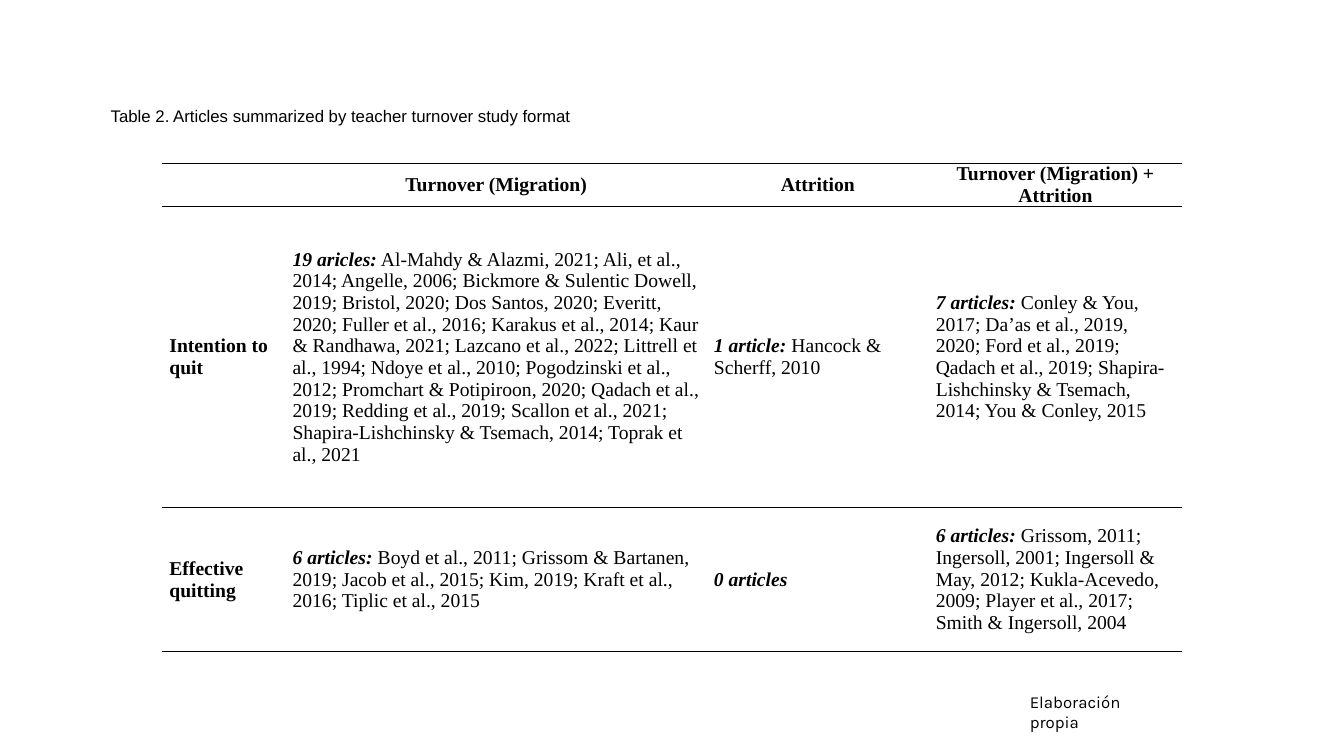
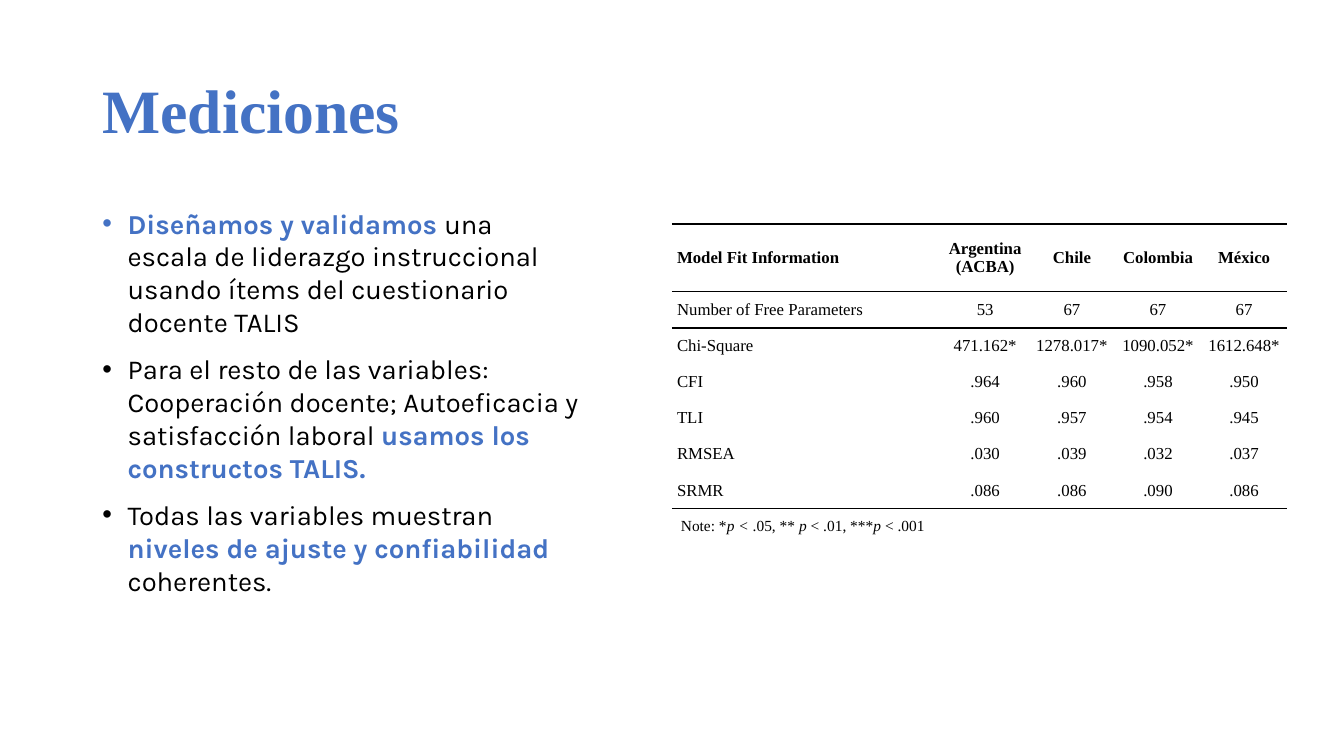
"""Build two slides on teacher turnover: a literature table and a model fit table."""
from lxml import etree
from pptx import Presentation
from pptx.dml.color import RGBColor
from pptx.enum import text as t
from pptx.oxml import ns
from pptx.util import Pt

BLACK = RGBColor(0x00, 0x00, 0x00)
BLUE = RGBColor(0x44, 0x72, 0xC4)
SERIF, SANS, CAPTION = "Times New Roman", "Karla", "Arial"
PLAIN_TABLE = "{2D5ABB26-0587-4C30-8999-92F81FD0307C}"
LEFT, CENTER = t.PP_ALIGN.LEFT, t.PP_ALIGN.CENTER

BOLD = {"bold": True}
ITALIC = {"italic": True}
LEAD = {"bold": True, "italic": True}
ACCENT = {"bold": True, "color": BLUE}

ARTICLES = [
    ["", "Turnover (Migration)", "Attrition", "Turnover (Migration) + Attrition"],
    [
        "Intention to quit",
        [("19 aricles:", LEAD),
         " Al-Mahdy & Alazmi, 2021; Ali, et al., 2014; Angelle, 2006; "
         "Bickmore & Sulentic Dowell, 2019; Bristol, 2020; Dos Santos, 2020; "
         "Everitt, 2020; Fuller et al., 2016; Karakus et al., 2014; "
         "Kaur & Randhawa, 2021; Lazcano et al., 2022; Littrell et al., 1994; "
         "Ndoye et al., 2010; Pogodzinski et al., 2012; "
         "Promchart & Potipiroon, 2020; Qadach et al., 2019; "
         "Redding et al., 2019; Scallon et al., 2021; "
         "Shapira-Lishchinsky & Tsemach, 2014; Toprak et al., 2021"],
        [("1 article:", LEAD), " Hancock & Scherff, 2010"],
        [("7 articles: ", LEAD),
         "Conley & You, 2017; Da’as et al., 2019, 2020; Ford et al., 2019; "
         "Qadach et al., 2019; Shapira-Lishchinsky & Tsemach, 2014; "
         "You & Conley, 2015"],
    ],
    [
        "Effective quitting",
        [("6 articles:", LEAD),
         " Boyd et al., 2011; Grissom & Bartanen, 2019; Jacob et al., 2015; "
         "Kim, 2019; Kraft et al., 2016; Tiplic et al., 2015"],
        [("0 articles", LEAD)],
        [("6 articles:", LEAD),
         " Grissom, 2011; Ingersoll, 2001; Ingersoll & May, 2012; "
         "Kukla-Acevedo, 2009; Player et al., 2017; Smith & Ingersoll, 2004"],
    ],
]

BULLETS = [
    [("Diseñamos y validamos ", ACCENT),
     "una escala de liderazgo instruccional usando ítems del cuestionario docente TALIS"],
    ["Para el resto de las variables: Cooperación docente; "
     "Autoeficacia y satisfacción laboral ",
     ("usamos los constructos TALIS.", ACCENT)],
    ["Todas las variables muestran ",
     ("niveles de ajuste y confiabilidad ", ACCENT), "coherentes."],
]

MODEL_FIT = [
    ["Model Fit Information", "Argentina (ACBA)", "Chile", "Colombia", "México"],
    ["Number of Free Parameters", "53", "67", "67", "67"],
    ["Chi-Square", "471.162*", "1278.017*", "1090.052*", "1612.648*"],
    ["CFI", ".964", ".960", ".958", ".950"],
    ["TLI", ".960", ".957", ".954", ".945"],
    ["RMSEA", ".030", ".039", ".032", ".037"],
    ["SRMR", ".086", ".086", ".090", ".086"],
]
NOTE = [" Note: *", ("p < ", ITALIC), ".05, ** ", ("p", ITALIC), " < .01, ***",
        ("p ", ITALIC), "< .001"]


def write(paragraph, runs, font=SERIF, size=12, color=BLACK, bold=False,
          italic=False, align=LEFT):
    """Fill a paragraph with a string or a list of strings and (string, format) pairs."""
    paragraph.alignment = align
    base = {"color": color, "bold": bold, "italic": italic}
    for item in [runs] if isinstance(runs, str) else runs:
        content, changes = (item, {}) if isinstance(item, str) else item
        style = {**base, **changes}
        run = paragraph.add_run()
        run.text = content
        run.font.name = font
        run.font.size = Pt(size)
        run.font.bold = style["bold"]
        run.font.italic = style["italic"]
        run.font.color.rgb = style["color"]


def place(shape, left, top, width, height):
    """Move and size a shape, in points."""
    shape.left, shape.top = Pt(left), Pt(top)
    shape.width, shape.height = Pt(width), Pt(height)


def add_label(slide, box, content, wrap, **style):
    """Add a text box with one paragraph."""
    frame = slide.shapes.add_textbox(*map(Pt, box)).text_frame
    frame.word_wrap = wrap
    write(frame.paragraphs[0], content, **style)


def add_border(cell, side):
    """Draw a thin black line on one side of a cell."""
    line = etree.SubElement(cell._tc.get_or_add_tcPr(), ns.qn("a:ln" + side), w=str(Pt(1)))
    fill = etree.SubElement(line, ns.qn("a:solidFill"))
    etree.SubElement(fill, ns.qn("a:srgbClr"), val=str(BLACK))


def add_ruled_table(slide, left, top, widths, heights, rules, margin):
    """Add an unfilled table with lines at the given row boundaries."""
    table = slide.shapes.add_table(
        len(heights), len(widths), Pt(left), Pt(top),
        Pt(sum(widths)), Pt(sum(heights))).table
    table._tbl.tblPr.find(ns.qn("a:tableStyleId")).text = PLAIN_TABLE
    table.first_row = table.horz_banding = False
    for column, width in zip(table.columns, widths):
        column.width = Pt(width)
    for index, (row, height) in enumerate(zip(table.rows, heights)):
        row.height = Pt(height)
        for cell in row.cells:
            cell.margin_left = cell.margin_right = Pt(margin)
            cell.margin_top = cell.margin_bottom = 0
            cell.vertical_anchor = t.MSO_ANCHOR.MIDDLE
            for side, boundary in (("T", index), ("B", index + 1)):
                if boundary in rules:
                    add_border(cell, side)
            cell.fill.background()
    return table


def fill_cells(table, rows, size, bold_labels, center_values):
    """Write the rows into the table, with a bold header."""
    for r, row in enumerate(rows):
        for c, content in enumerate(row):
            if not content:
                continue
            centered = c > 0 and (r == 0 or center_values)
            write(table.cell(r, c).text_frame.paragraphs[0], content, size=size,
                  bold=r == 0 or (c == 0 and bold_labels),
                  align=CENTER if centered else LEFT)


def add_bullet(paragraph):
    """Give a paragraph a hanging round bullet."""
    paragraph.space_before = Pt(10)
    properties = paragraph._p.get_or_add_pPr()
    properties.set("marL", str(Pt(18)))
    properties.set("indent", str(-Pt(18)))
    etree.SubElement(properties, ns.qn("a:buFont"), typeface=CAPTION)
    etree.SubElement(properties, ns.qn("a:buChar"), char="•")


def build_articles(presentation):
    """Add the slide with the literature table."""
    slide = presentation.slides.add_slide(presentation.slide_layouts[6])
    table = add_ruled_table(slide, 116, 116.5, [88, 301, 158.5, 181],
                            [29.5, 215, 103], {0, 1, 2, 3}, 5)
    fill_cells(table, ARTICLES, 14, bold_labels=True, center_values=False)
    add_label(slide, (72, 72, 400, 22),
              "Table 2. Articles summarized by teacher turnover study format",
              False, font=CAPTION)
    add_label(slide, (728.5, 490.5, 108, 36), "Elaboración propia", True, font=SANS)


def build_measures(presentation):
    """Add the slide with the bullets and the model fit table."""
    slide = presentation.slides.add_slide(presentation.slide_layouts[1])
    title, body = slide.shapes.title, slide.placeholders[1]
    place(title, 66, 29, 828, 104)
    title.text_frame.vertical_anchor = t.MSO_ANCHOR.MIDDLE
    heading = title.text_frame.paragraphs[0]
    heading.line_spacing = 0.9
    write(heading, "Mediciones", size=44, **ACCENT)

    place(body, 66, 144, 355, 343)
    frame = body.text_frame
    frame.auto_size = t.MSO_AUTO_SIZE.NONE
    for index, runs in enumerate(BULLETS):
        paragraph = frame.add_paragraph() if index else frame.paragraphs[0]
        add_bullet(paragraph)
        write(paragraph, runs, font=SANS, size=19.6)

    last = len(MODEL_FIT)
    table = add_ruled_table(slide, 480, 160, [192.5, 62.5] + [61.5] * 3,
                            [48.5] + [25.8] * last, {0, 1, last}, 3.6)
    fill_cells(table, MODEL_FIT, 12, bold_labels=False, center_values=True)
    note = table.cell(last, 0)
    note.merge(table.cell(last, 4))
    write(note.text_frame.paragraphs[0], NOTE, size=11)


def main():
    """Build and save the presentation."""
    presentation = Presentation()
    presentation.slide_width, presentation.slide_height = Pt(960), Pt(540)
    build_articles(presentation)
    build_measures(presentation)
    presentation.save("out.pptx")


if __name__ == "__main__":
    main()
